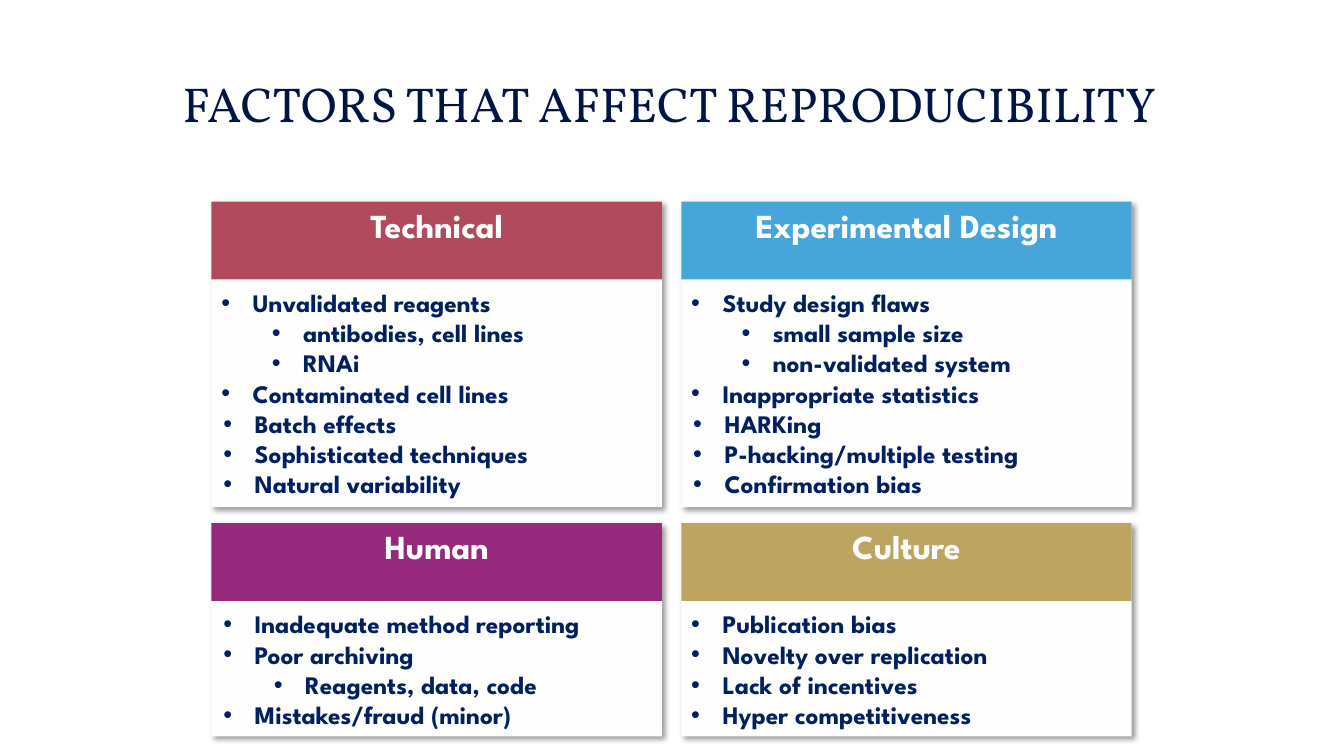
"""Build a slide of four cards listing factors that affect reproducibility."""
from lxml.etree import SubElement
from pptx import Presentation
from pptx.dml.color import RGBColor
from pptx.enum.shapes import MSO_SHAPE as Preset
from pptx.enum.text import MSO_ANCHOR as Anchor, PP_ALIGN as Align
from pptx.oxml.ns import qn
from pptx.util import Cm, Pt

TITLE = "FACTORS THAT AFFECT REPRODUCIBILITY"
MAIN, SUB, WIDE_MAIN, WIDE_SUB = 0.79, 2.06, 0.84, 2.11
CARD_ROWS = [
    [
        ("Technical", "B24A5D", [
            ("Unvalidated reagents", MAIN),
            ("antibodies, cell lines", SUB),
            ("RNAi", SUB),
            ("Contaminated cell lines", MAIN),
            ("Batch effects", WIDE_MAIN),
            ("Sophisticated techniques", WIDE_MAIN),
            ("Natural variability", WIDE_MAIN),
        ]),
        ("Experimental Design", "48A5D9", [
            ("Study design flaws", MAIN),
            ("small sample size", SUB),
            ("non-validated system", SUB),
            ("Inappropriate statistics", MAIN),
            ("HARKing", WIDE_MAIN),
            ("P-hacking/multiple testing", WIDE_MAIN),
            ("Confirmation bias", WIDE_MAIN),
        ]),
    ],
    [
        ("Human", "952A7D", [
            ("Inadequate method reporting", WIDE_MAIN),
            ("Poor archiving", WIDE_MAIN),
            ("Reagents, data, code", WIDE_SUB),
            ("Mistakes/fraud (minor)", WIDE_MAIN),
        ]),
        ("Culture", "BDA461", [
            ("Publication bias", MAIN),
            ("Novelty over replication", MAIN),
            ("Lack of incentives", MAIN),
            ("Hyper competitiveness", MAIN),
        ]),
    ],
]
LEFT, TOP, CARD_WIDTH, HEADER_HEIGHT = 5.33, 5.08, 11.35, 1.96
ROW_HEIGHTS = [7.7, 5.38]
COLUMN_GAP, ROW_GAP = 0.49, 0.4
BULLET_HANG = 0.79


def color(value):
    return RGBColor.from_string(value)


def write(paragraph, text, font="League Spartan", size=18, fill="002060",
          bold=True, align=Align.LEFT):
    paragraph.alignment = align
    run = paragraph.add_run()
    run.text = text
    run.font.name = font
    run.font.size = Pt(size)
    run.font.bold = bold
    run.font.color.rgb = color(fill)


def add_bullet(paragraph, indent):
    properties = paragraph._p.get_or_add_pPr()
    properties.set("marL", str(Cm(indent)))
    properties.set("indent", str(-Cm(BULLET_HANG)))
    SubElement(properties, qn("a:buFont"), typeface="Arial")
    SubElement(properties, qn("a:buChar"), char="•")


def add_shadow(shape):
    effects = shape._element.spPr.find(qn("a:effectLst"))
    shadow = SubElement(effects, qn("a:outerShdw"), blurRad=str(Pt(4)), dist=str(Pt(3)),
                        dir="2700000", algn="tl", rotWithShape="0")
    black = SubElement(shadow, qn("a:srgbClr"), val="000000")
    SubElement(black, qn("a:alpha"), val="40000")


def add_panel(shapes, left, top, height, fill, inset):
    shape = shapes.add_shape(Preset.RECTANGLE, Cm(left), Cm(top), Cm(CARD_WIDTH), Cm(height))
    shape.shadow.inherit = False
    shape.fill.solid()
    shape.fill.fore_color.rgb = color(fill)
    shape.line.fill.background()
    frame = shape.text_frame
    frame.word_wrap = True
    frame.vertical_anchor = Anchor.TOP
    frame.margin_top = Cm(inset)
    return shape


def add_card(slide, left, top, height, heading, fill, items):
    shapes = slide.shapes.add_group_shape().shapes
    body = add_panel(shapes, left, top, height, "FEFEFF", inset=2.16)
    add_shadow(body)
    frame = body.text_frame
    for index, (text, indent) in enumerate(items):
        paragraph = frame.add_paragraph() if index else frame.paragraphs[0]
        write(paragraph, text)
        add_bullet(paragraph, indent)
    header = add_panel(shapes, left, top, HEADER_HEIGHT, fill, inset=0.08)
    write(header.text_frame.paragraphs[0], heading, size=24, fill="FFFFFF", align=Align.CENTER)


def main():
    presentation = Presentation()
    presentation.slide_width, presentation.slide_height = Cm(33.87), Cm(19.05)
    slide = presentation.slides.add_slide(presentation.slide_layouts[5])
    title = slide.shapes.title
    title.left, title.top, title.width, title.height = Cm(1.57), Cm(1.14), Cm(30.61), Cm(2.9)
    title.text_frame.vertical_anchor = Anchor.MIDDLE
    write(title.text_frame.paragraphs[0], TITLE, font="Vollkorn", size=35,
          fill="001546", bold=False, align=Align.CENTER)
    top = TOP
    for cards, height in zip(CARD_ROWS, ROW_HEIGHTS):
        for column, card in enumerate(cards):
            left = LEFT + column * (CARD_WIDTH + COLUMN_GAP)
            add_card(slide, left, top, height, *card)
        top += height + ROW_GAP
    presentation.save("out.pptx")


if __name__ == "__main__":
    main()
